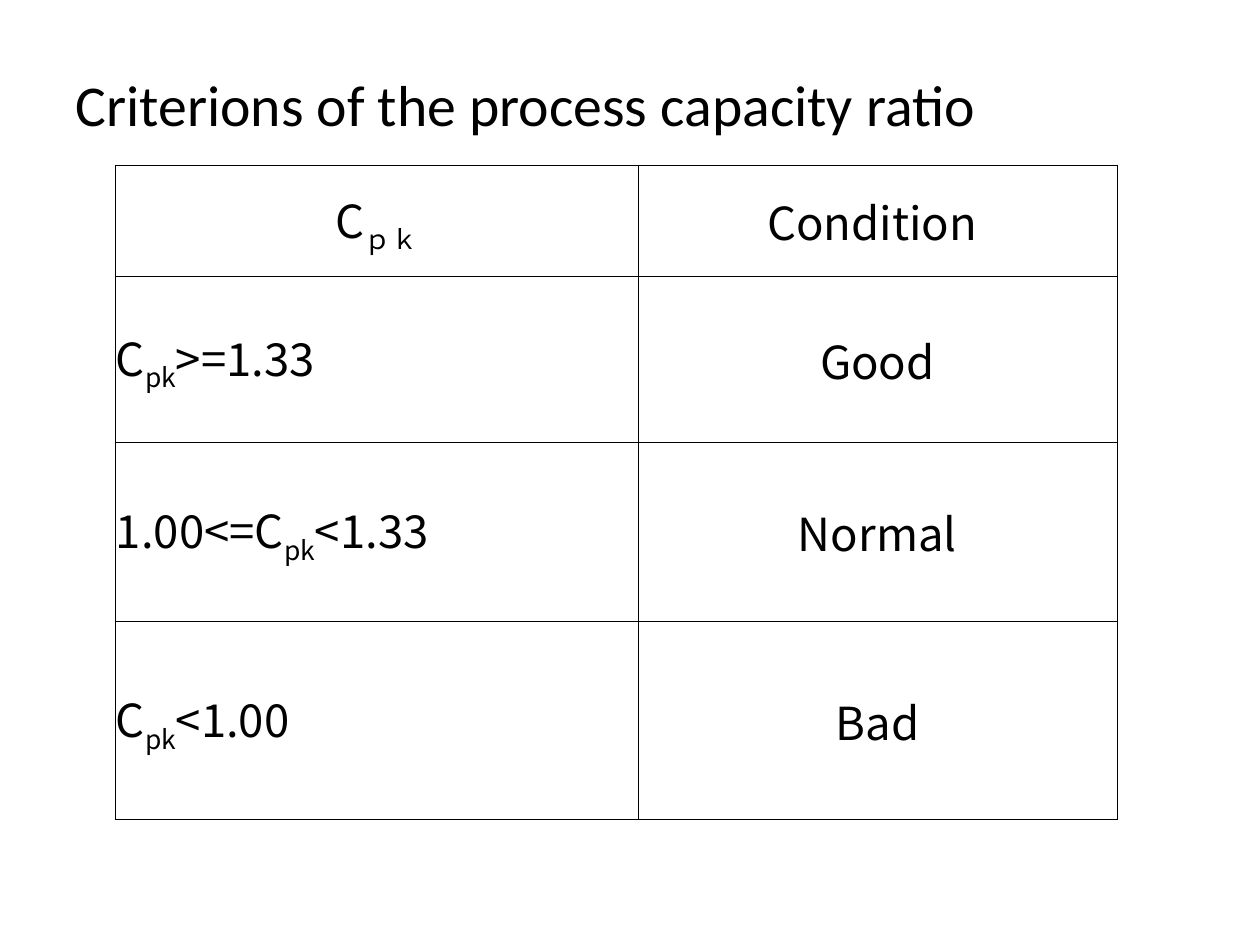
"""Builds a slide with a table of process capacity ratio criteria."""
from dataclasses import dataclass

from lxml import etree
from pptx import Presentation
from pptx import util as u
from pptx.dml.color import RGBColor
from pptx.enum import text as t
from pptx.oxml import ns

SCALE = 914400 / 126


@dataclass(frozen=True)
class Theme:
    ink: str = "000000"
    head: str = "Calibri"
    body: str = "Noto Sans CJK JP"
    head_size: int = 33
    body_size: int = 26
    line: float = 0.5
    sub: int = -25000


@dataclass(frozen=True)
class Row:
    high: int
    lead: str
    sub: str
    tail: str
    state: str


THEME = Theme()
WIDTHS = (523, 479)
ROWS = (
    Row(111, "C", "ｐｋ", "", "Condition "),
    Row(166, "C", "pk", ">=1.33", "Good"),
    Row(179, "1.00<=C", "pk", "<1.33", "Normal"),
    Row(199, "C", "pk", "<1.00", "Bad"),
)


def px(n: int) -> u.Emu:
    """Turns pixels into EMU."""
    return u.Emu(round(n * SCALE))


def put(thing, vals: dict) -> None:
    """Sets each attribute named in a dict."""
    for key, val in vals.items():
        setattr(thing, key, val)


def add_run(para, words: str, face: str, size: int, base: int = 0) -> None:
    """Adds one styled run to a paragraph."""
    run = para.add_run()
    run.text = words
    put(run.font, {"name": face, "size": u.Pt(size), "bold": False})
    run.font.color.rgb = RGBColor.from_string(THEME.ink)
    props = run._r.get_or_add_rPr()
    etree.SubElement(props, ns.qn("a:ea"), typeface=face)
    if base:
        props.set("baseline", str(base))


def add_edge(cell) -> None:
    """Draws a thin line on all four sides of a cell."""
    props = cell._tc.get_or_add_tcPr()
    for i, side in enumerate("LRTB"):
        line = etree.Element(ns.qn(f"a:ln{side}"), w=str(u.Pt(THEME.line)))
        fill = etree.SubElement(line, ns.qn("a:solidFill"))
        etree.SubElement(fill, ns.qn("a:srgbClr"), val=THEME.ink)
        props.insert(i, line)


def fill_cell(cell, parts: tuple, align: t.PP_ALIGN) -> None:
    """Writes text parts into a plain bordered cell."""
    put(cell, {
        "margin_left": px(1), "margin_right": px(1),
        "margin_top": px(1), "margin_bottom": 0,
        "vertical_anchor": t.MSO_ANCHOR.MIDDLE,
    })
    cell.fill.background()
    add_edge(cell)
    para = cell.text_frame.paragraphs[0]
    para.alignment = align
    for words, base in parts:
        if words:
            add_run(para, words, THEME.body, THEME.body_size, base)


def add_title(slide, words: str) -> None:
    """Places and styles the title."""
    title = slide.shapes.title
    put(title, {"left": px(63), "top": px(21),
                "width": px(1134), "height": px(174)})
    put(title.text_frame, {"vertical_anchor": t.MSO_ANCHOR.MIDDLE,
                           "auto_size": t.MSO_AUTO_SIZE.NONE})
    para = title.text_frame.paragraphs[0]
    put(para, {"alignment": t.PP_ALIGN.LEFT, "line_spacing": 0.9})
    add_run(para, words, THEME.head, THEME.head_size)


def add_grid(slide, rows: tuple[Row, ...]) -> None:
    """Adds the table of criteria."""
    high = sum(row.high for row in rows)
    table = slide.shapes.add_table(
        len(rows), len(WIDTHS), px(115), px(165), px(sum(WIDTHS)), px(high)
    ).table
    put(table, {"first_row": False, "horz_banding": False})
    for col, wide in zip(table.columns, WIDTHS):
        col.width = px(wide)
    for i, row in enumerate(rows):
        table.rows[i].height = px(row.high)
        ratio = ((row.lead, 0), (row.sub, THEME.sub), (row.tail, 0))
        align = t.PP_ALIGN.LEFT if i else t.PP_ALIGN.CENTER
        fill_cell(table.cell(i, 0), ratio, align)
        fill_cell(table.cell(i, 1), ((row.state, 0),), t.PP_ALIGN.CENTER)


def main() -> None:
    """Builds and saves the slide."""
    deck = Presentation()
    put(deck, {"slide_width": px(1260), "slide_height": px(945)})
    slide = deck.slides.add_slide(deck.slide_layouts[5])
    add_title(slide, "Criterions of the process capacity ratio")
    add_grid(slide, ROWS)
    deck.save("out.pptx")


if __name__ == "__main__":
    main()
